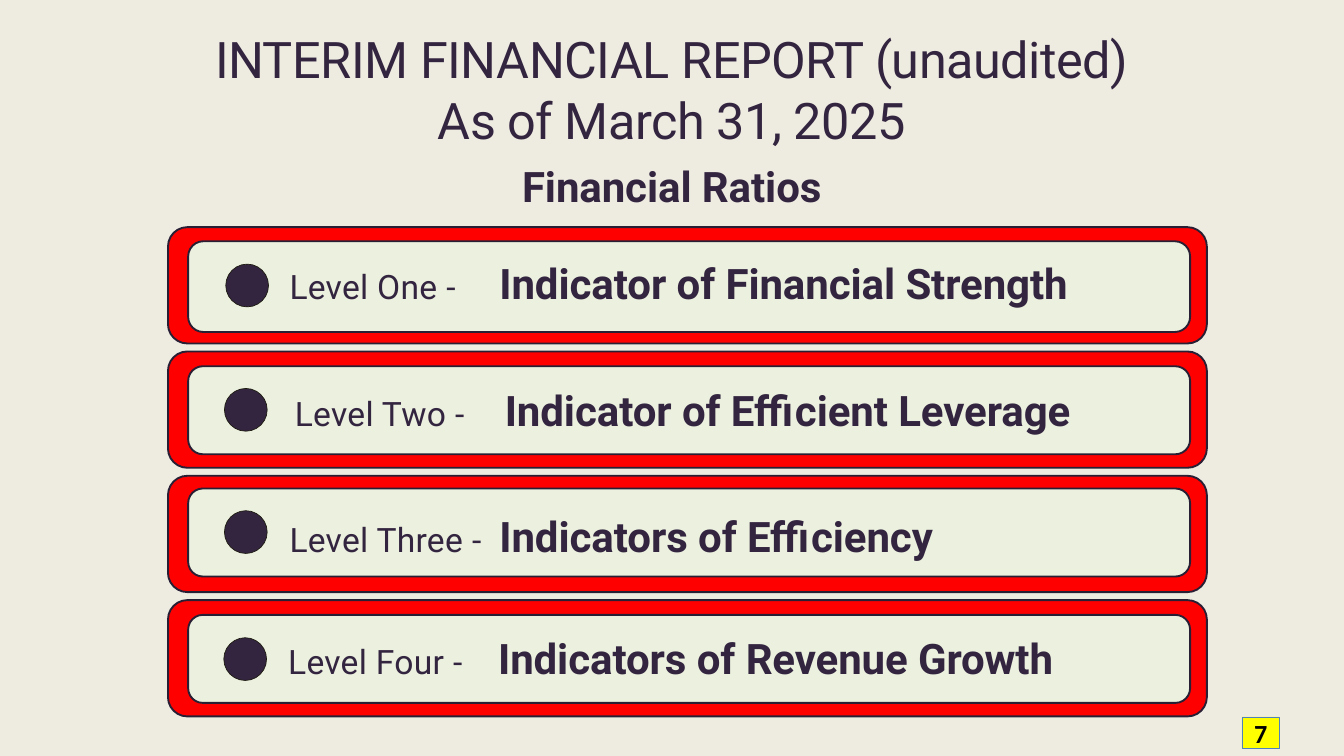
"""Build the slide that lists the four levels of financial ratios."""
from pptx import Presentation
from pptx.dml.color import RGBColor
from pptx.enum.shapes import MSO_SHAPE
from pptx.enum.text import MSO_ANCHOR, PP_ALIGN
from pptx.util import Pt

ROUNDED, OVAL, RECTANGLE = MSO_SHAPE.ROUNDED_RECTANGLE, MSO_SHAPE.OVAL, MSO_SHAPE.RECTANGLE
CENTER, LEFT = PP_ALIGN.CENTER, PP_ALIGN.LEFT
TOP, MIDDLE = MSO_ANCHOR.TOP, MSO_ANCHOR.MIDDLE

THEME = {
    "background": "EEECE1", "frame": "FF0000", "panel": "EBF1DE", "outline": "291F35",
    "dot": "332440", "dot_line": "1E1C11", "badge": "FFFF00", "badge_line": "4F81BD",
    "title": {"name": "Roboto", "size": 54, "bold": False, "color": "332440", "spacing": -50},
    "heading": {"name": "Roboto", "size": 45, "bold": True, "color": "332440", "spacing": -10},
    "level": {"name": "Roboto", "size": 36, "bold": False, "color": "332440", "spacing": 30},
    "dash": {"name": "Roboto", "size": 36, "bold": False, "color": "332440", "spacing": 0},
    "number": {"name": "Calibri", "size": 28, "bold": True, "color": "000000", "spacing": 0},
}


def add_box(kind, left, top, width, height, fill, line, weight):
    """Add a filled preset shape with an outline."""
    shape = slide.shapes.add_shape(kind, Pt(left), Pt(top), Pt(width), Pt(height))
    shape.shadow.inherit = False
    shape.fill.solid()
    shape.fill.fore_color.rgb = RGBColor.from_string(THEME[fill])
    shape.line.color.rgb = RGBColor.from_string(THEME[line])
    shape.line.width = Pt(weight)
    return shape


def write_text(shape, paragraphs, alignment, anchor, margins):
    """Write paragraphs, each a space before and its styled runs."""
    frame = shape.text_frame
    settings = {"word_wrap": True, "vertical_anchor": anchor}
    settings.update(zip(("margin_left", "margin_top", "margin_right", "margin_bottom"),
                        map(Pt, margins)))
    for name, value in settings.items():
        setattr(frame, name, value)
    for index, (space_before, runs) in enumerate(paragraphs):
        paragraph = frame.add_paragraph() if index else frame.paragraphs[0]
        paragraph.alignment = alignment
        paragraph.space_before = Pt(space_before)
        for text, style in runs:
            run = paragraph.add_run()
            run.text = text
            look = THEME[style]
            for name, value in {"name": look["name"], "size": Pt(look["size"]),
                                "bold": look["bold"]}.items():
                setattr(run.font, name, value)
            run.font.color.rgb = RGBColor.from_string(look["color"])
            run.font._element.set("spc", str(look["spacing"]))


presentation = Presentation()
presentation.slide_width, presentation.slide_height = Pt(1440), Pt(810)
slide = presentation.slides.add_slide(presentation.slide_layouts[6])
slide.background.fill.solid()
slide.background.fill.fore_color.rgb = RGBColor.from_string(THEME["background"])

title = slide.shapes.add_textbox(Pt(180), Pt(29.5), Pt(1079.3), Pt(197.3))
write_text(title, [
    (4, [("INTERIM FINANCIAL REPORT (unaudited)", "title")]),
    (1, [("As of March 31, 2025", "title")]),
    (11, [("Financial Ratios", "heading")]),
], CENTER, TOP, (0, 0.7, 0, 0))

FRAME_TOP, FRAME_PITCH = 243.4, 133.2
levels = [
    ("Level One ", "Indicator of Financial Strength", 258.5, 97.2, 241.9, 283, 303.1, 272.9),
    ("Level Two ", "Indicator of Efficient Leverage", 392.4, 94.3, 240.5, 416.2, 308.9, 408.2),
    ("Level Three ", "Indicators of Efficiency", 523.4, 94.3, 240.5, 547.2, 303.1, 543.6),
    ("Level Four ", "Indicators of Revenue Growth", 658.8, 94.3, 239.8, 683.3, 301.7, 673.9),
]
for row, (level, indicator, panel_top, panel_height, dot_left, dot_top,
          text_left, text_top) in enumerate(levels):
    add_box(ROUNDED, 180, FRAME_TOP + row * FRAME_PITCH, 1113.1, 124.6, "frame", "outline", 2)
    add_box(ROUNDED, 201.6, panel_top, 1073.5, panel_height, "panel", "outline", 2)
    add_box(OVAL, dot_left, dot_top, 45.8, 45.8, "dot", "dot_line", 0.75)
    label = slide.shapes.add_textbox(Pt(text_left), Pt(text_top), Pt(960), Pt(61.9))
    write_text(label, [(5.8, [(level, "level"), ("- \t ", "dash"), (indicator, "heading")])],
               LEFT, TOP, (7.2, 3.6, 7.2, 3.6))

badge = add_box(RECTANGLE, 1330.6, 768.2, 40.3, 33.8, "badge", "badge_line", 0.75)
write_text(badge, [(0, [("7", "number")])], CENTER, MIDDLE, (0, 0, 0, 0))

presentation.save("out.pptx")
